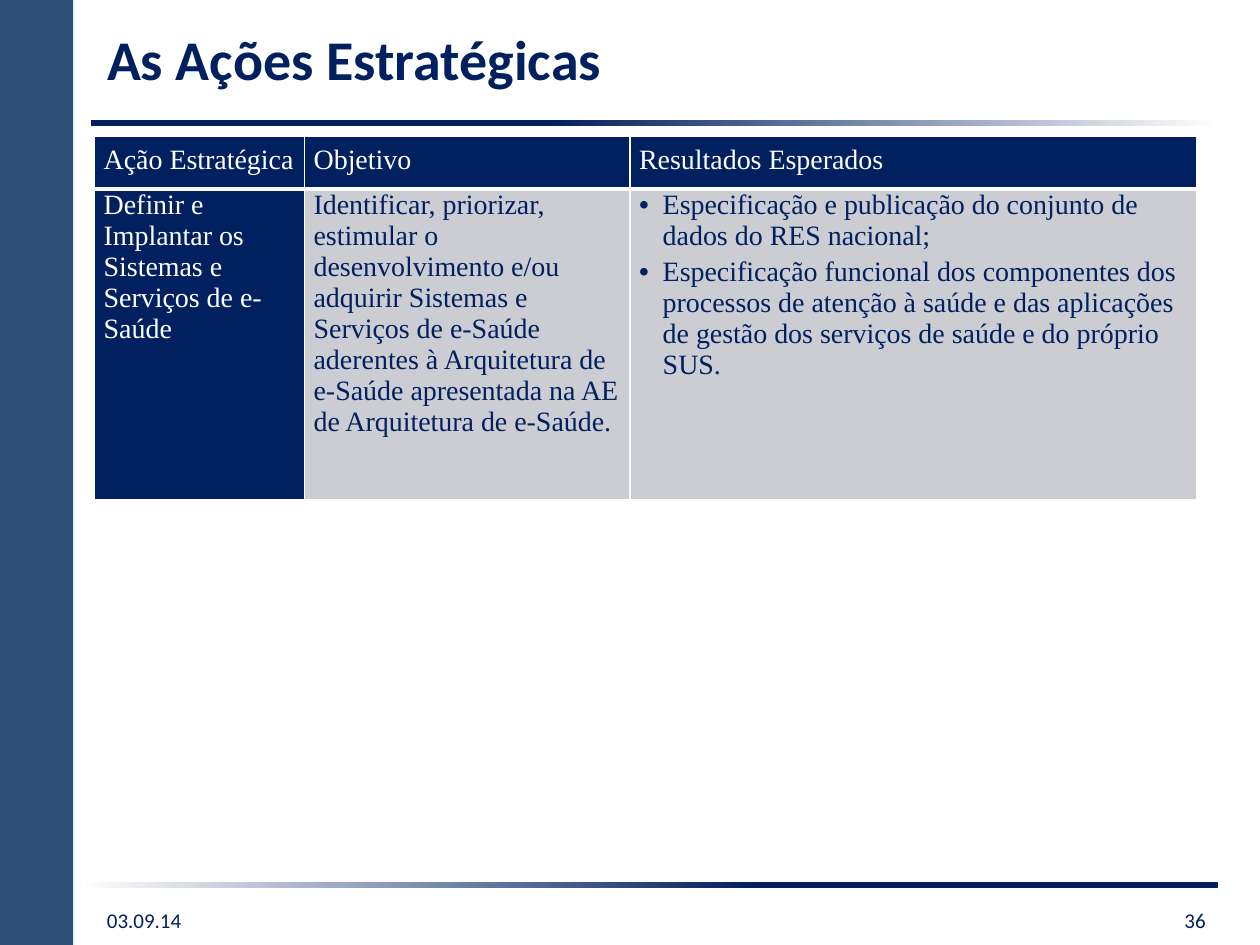
"""Build the slide on strategic actions: title, ruled frame and action table."""
from copy import deepcopy
from lxml import etree
from pptx import Presentation
from pptx.dml.color import RGBColor
from pptx.enum import shapes, text
from pptx.oxml import ns
from pptx.util import Pt

NAVY, WHITE, GREY, STEEL = "002060", "FFFFFF", "CCCDD2", "2C4D76"
rgb = RGBColor.from_string


def add_run(paragraph, words, size, font, color, bold=False):
    run = paragraph.add_run()
    run.text = words
    run.font.size, run.font.name, run.font.bold = Pt(size), font, bold
    run.font.color.rgb = rgb(color)


prs = Presentation()
prs.slide_width, prs.slide_height = Pt(720), Pt(540)
slide = prs.slides.add_slide(prs.slide_layouts[5])

sidebar = slide.shapes.add_shape(shapes.MSO_SHAPE.RECTANGLE, 0, 0, Pt(41.75), Pt(540))
sidebar.shadow.inherit = False
sidebar.fill.solid()
sidebar.fill.fore_color.rgb = rgb(STEEL)
sidebar.line.fill.background()

for left, top, width, turn in [(52, 68.5, 643.5, 0), (46, 504, 650, 180)]:
    rule = slide.shapes.add_shape(
        shapes.MSO_SHAPE.ROUNDED_RECTANGLE, Pt(left), Pt(top), Pt(width), Pt(3.5))
    rule.rotation = turn
    rule.shadow.inherit = False
    rule.line.fill.background()
    rule.fill.gradient()
    rule.fill.gradient_angle = 0
    stop_list = rule.fill._fill._gradFill.find(ns.qn("a:gsLst"))
    stop_list.insert(1, deepcopy(stop_list[0]))
    for stop, (place, color) in zip(
            rule.fill.gradient_stops, [(0, NAVY), (0.41, NAVY), (1, WHITE)]):
        stop.position = place
        stop.color.rgb = rgb(color)

title = slide.shapes.title
title.left, title.top, title.width, title.height = Pt(54), Pt(6), Pt(642), Pt(54)
title.text_frame.vertical_anchor = text.MSO_ANCHOR.MIDDLE
title.text_frame.paragraphs[0].alignment = text.PP_ALIGN.LEFT
add_run(title.text_frame.paragraphs[0], "As Ações Estratégicas", 32, "Calibri", NAVY, True)

for words, left, align in [("03.09.14", 54, text.PP_ALIGN.LEFT),
                           ("36", 528, text.PP_ALIGN.RIGHT)]:
    footer = slide.shapes.add_textbox(Pt(left), Pt(511), Pt(168), Pt(29)).text_frame
    footer.word_wrap = True
    footer.vertical_anchor = text.MSO_ANCHOR.MIDDLE
    footer.paragraphs[0].alignment = align
    add_run(footer.paragraphs[0], words, 12, "Calibri", NAVY)

rows = [
    [["Ação Estratégica"], ["Objetivo"], ["Resultados Esperados"]],
    [["Definir e Implantar os Sistemas e Serviços de e-Saúde"],
     ["Identificar, priorizar, estimular o desenvolvimento e/ou adquirir Sistemas e "
      "Serviços de e-Saúde aderentes à Arquitetura de e-Saúde apresentada na AE de "
      "Arquitetura de e-Saúde."],
     ["Especificação e publicação do conjunto de dados do RES nacional;",
      "Especificação funcional dos componentes dos processos de atenção à saúde e das "
      "aplicações de gestão dos serviços de saúde e do próprio SUS."]],
]
actions = slide.shapes.add_table(2, 3, Pt(54), Pt(78), Pt(630), Pt(207.5)).table
actions.first_row = actions.horz_banding = False
for column, width in zip(actions.columns, [120, 186, 324]):
    column.width = Pt(width)
for row, height in zip(actions.rows, [30, 177.5]):
    row.height = Pt(height)

for r, row in enumerate(rows):
    for c, entries in enumerate(row):
        cell = actions.cell(r, c)
        is_header = r == 0
        is_dark = is_header or c == 0
        cell.margin_left = cell.margin_right = Pt(5.25)
        cell.margin_top = cell.margin_bottom = 0
        cell.fill.solid()
        cell.fill.fore_color.rgb = rgb(NAVY if is_dark else GREY)
        borders = cell._tc.get_or_add_tcPr()
        for i, side in enumerate("LRTB"):
            weight = 3 if is_header and side == "B" else 1
            border = etree.Element(ns.qn(f"a:ln{side}"), w=str(Pt(weight)))
            paint = etree.SubElement(border, ns.qn("a:solidFill"))
            etree.SubElement(paint, ns.qn("a:srgbClr"), val=WHITE)
            borders.insert(i, border)
        for i, words in enumerate(entries):
            entry = cell.text_frame.add_paragraph() if i else cell.text_frame.paragraphs[0]
            if is_header:
                entry.alignment = text.PP_ALIGN.JUSTIFY
                entry.line_spacing = 1.25
                entry.space_after = Pt(6)
            elif c:
                entry.space_after = Pt(3)
            if len(entries) > 1:
                props = entry._p.get_or_add_pPr()
                props.set("marL", str(Pt(13.5)))
                props.set("indent", str(-Pt(13.5)))
                etree.SubElement(props, ns.qn("a:buFont"), typeface="Arial")
                etree.SubElement(props, ns.qn("a:buChar"), char="•")
            add_run(entry, words, 16, "Times New Roman", WHITE if is_dark else NAVY)

prs.save("out.pptx")
